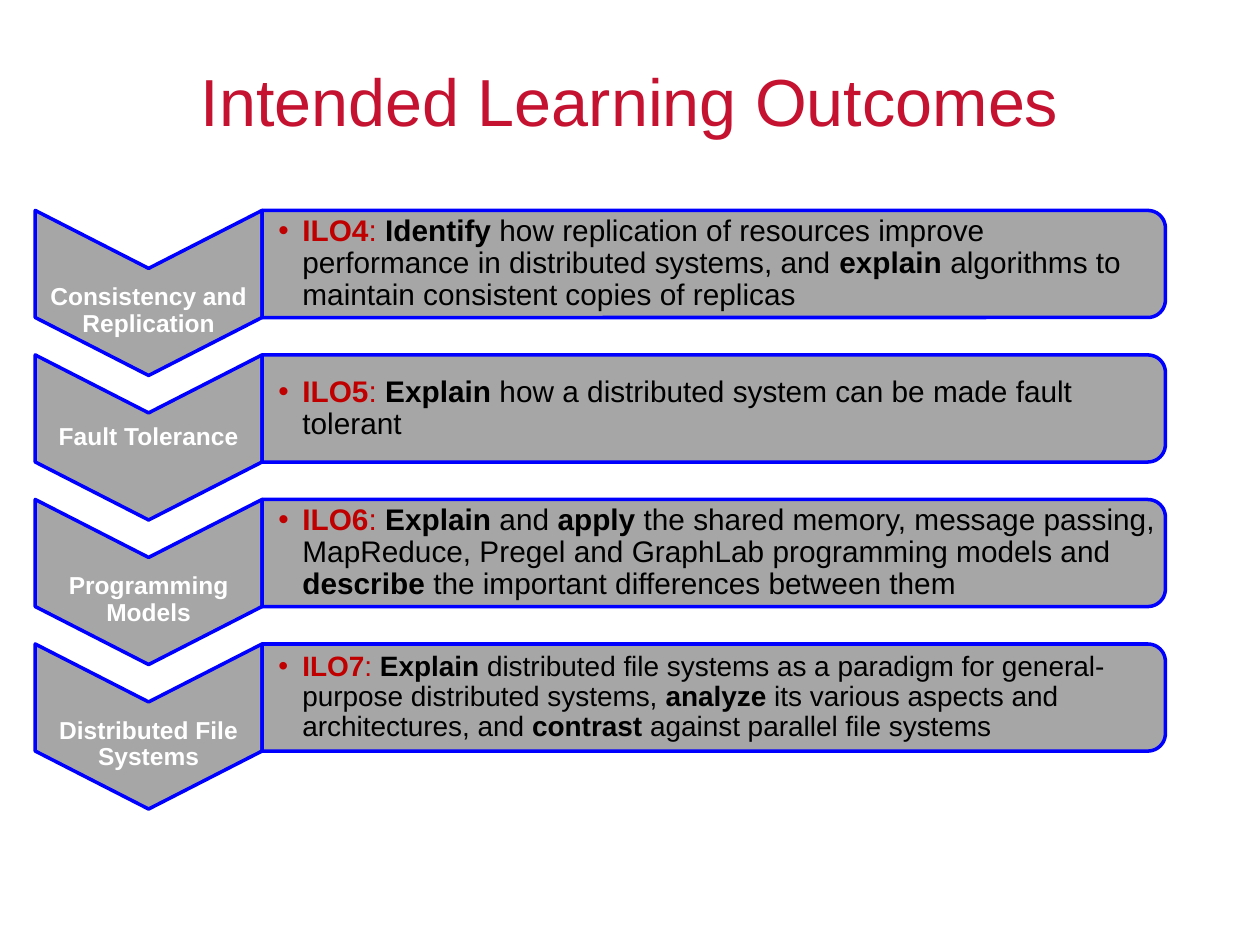
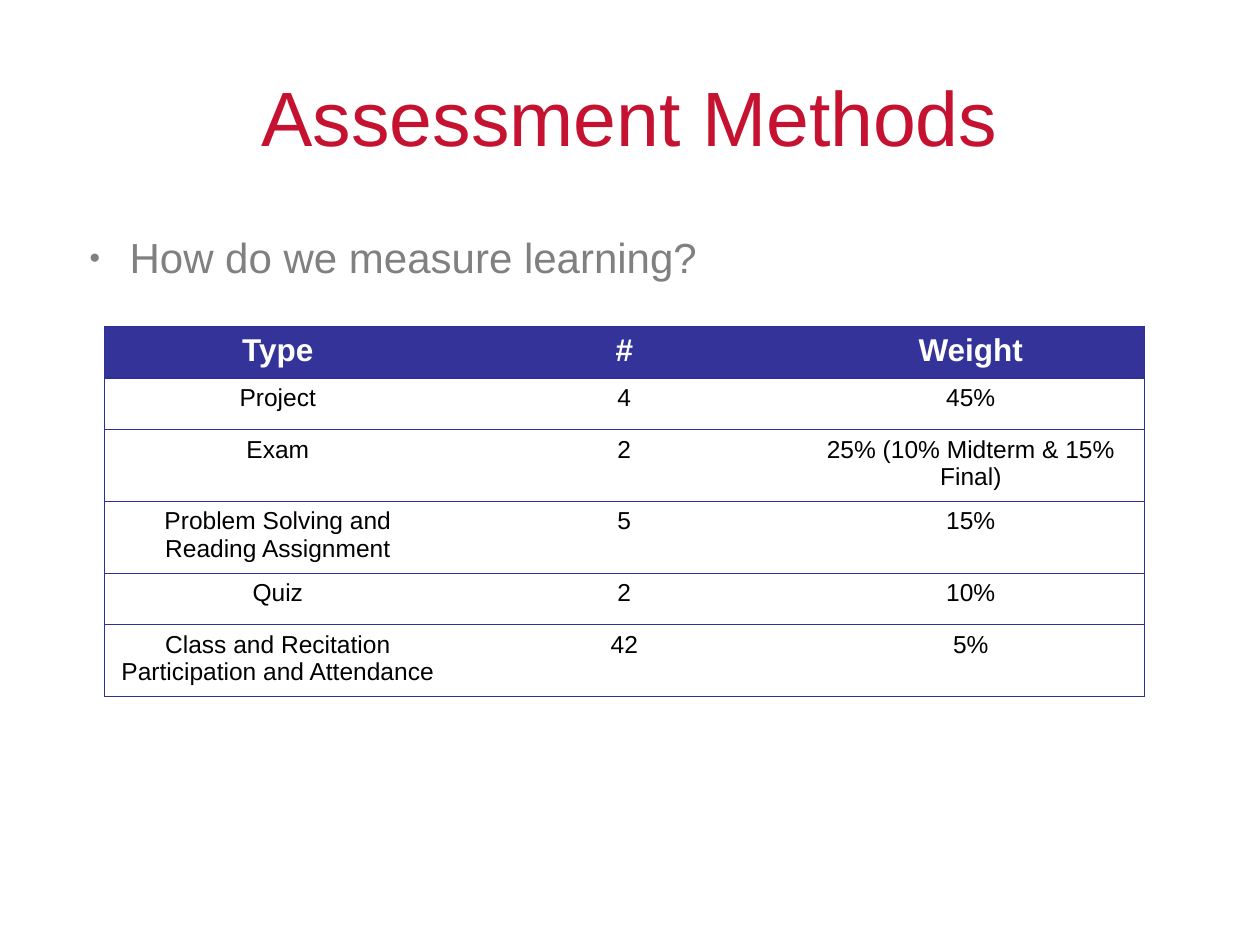
from dataclasses import dataclass
from math import cos, pi, sin

from lxml import etree
from pptx import Presentation
from pptx.dml.color import RGBColor
from pptx.enum.text import MSO_ANCHOR, PP_ALIGN
from pptx.oxml.ns import qn
from pptx.util import Inches, Pt

CENTER, LEFT = PP_ALIGN.CENTER, PP_ALIGN.LEFT
TOP, MIDDLE = MSO_ANCHOR.TOP, MSO_ANCHOR.MIDDLE
TITLE_ONLY = 5


@dataclass(frozen=True)
class Theme:
    """Colours, type sizes and line widths shared by the slides."""
    font: str = "Arial"
    title: str = "C41230"
    label: str = "C00000"
    black: str = "000000"
    white: str = "FFFFFF"
    question: str = "808080"
    panel: str = "A6A6A6"
    outline: str = "0000FF"
    header: str = "333399"
    border: str = "2F2F98"
    outline_width: float = 2
    border_width: float = 0.75
    question_size: int = 24
    header_size: int = 18
    small_size: int = 14


THEME = Theme()

OUTCOMES = [
    ("Consistency and Replication", "ILO4", 17,
     "*Identify* how replication of resources improve performance in distributed systems, "
     "and *explain* algorithms to maintain consistent copies of replicas"),
    ("Fault Tolerance", "ILO5", 17,
     "*Explain* how a distributed system can be made fault tolerant"),
    ("Programming Models", "ILO6", 17,
     "*Explain* and *apply* the shared memory, message passing, MapReduce, Pregel and GraphLab "
     "programming models and *describe* the important differences between them"),
    ("Distributed File Systems", "ILO7", 16,
     "*Explain* distributed file systems as a paradigm for general-purpose distributed systems, "
     "*analyze* its various aspects and architectures, and *contrast* against parallel file systems"),
]

ASSESSMENTS = [
    ("Type", "#", "Weight"),
    ("Project", "4", "45%"),
    ("Exam", "2", "25% (10% Midterm & 15% Final)"),
    ("Problem Solving and Reading Assignment", "5", "15%"),
    ("Quiz", "2", "10%"),
    ("Class and Recitation Participation and Attendance", "42", "5%"),
]
ROW_HEIGHTS = [0.41, 0.41, 0.57, 0.57, 0.41, 0.57]


def add_text(paragraph, text, size, color, bold=False, align=None, spacing=None):
    """Add text to a paragraph, switching bold at each asterisk."""
    if align is not None:
        paragraph.alignment = align
    if spacing is not None:
        paragraph.line_spacing = spacing
    for index, part in enumerate(text.split("*")):
        if part:
            run = paragraph.add_run()
            run.text = part
            run.font.name = THEME.font
            run.font.size = Pt(size)
            run.font.bold = bold or index % 2 == 1
            run.font.color.rgb = RGBColor.from_string(color)


def add_bullet(paragraph, character, color, margin, hanging, percent=100):
    """Give a paragraph a hanging bullet."""
    properties = paragraph._p.get_or_add_pPr()
    properties.set("marL", str(Inches(margin)))
    properties.set("indent", str(-Inches(hanging)))
    bullet_color = etree.SubElement(properties, qn("a:buClr"))
    etree.SubElement(bullet_color, qn("a:srgbClr"), val=color)
    etree.SubElement(properties, qn("a:buSzPct"), val=str(percent * 1000))
    etree.SubElement(properties, qn("a:buFont"), typeface=THEME.font)
    etree.SubElement(properties, qn("a:buChar"), char=character)


def set_frame(text_frame, anchor, insets):
    """Wrap a text frame, set its anchor and insets, and return its first paragraph."""
    text_frame.word_wrap = True
    text_frame.vertical_anchor = anchor
    (text_frame.margin_left, text_frame.margin_top,
     text_frame.margin_right, text_frame.margin_bottom) = map(Inches, insets)
    return text_frame.paragraphs[0]


def add_titled_slide(presentation, title, size, top, height):
    """Add a title-only slide with a formatted title."""
    slide = presentation.slides.add_slide(presentation.slide_layouts[TITLE_ONLY])
    shape = slide.shapes.title
    shape.left, shape.top, shape.width, shape.height = map(Inches, (0.5, top, 9, height))
    paragraph = set_frame(shape.text_frame, MIDDLE, (0.1, 0.05, 0.1, 0.05))
    add_text(paragraph, title, size, THEME.title, align=CENTER)
    return slide


def add_panel(slide, points):
    """Draw a closed grey outline through points given in inches."""
    corners = [(Inches(x), Inches(y)) for x, y in points]
    builder = slide.shapes.build_freeform(*corners[0])
    builder.add_line_segments(corners[1:], close=True)
    shape = builder.convert_to_shape()
    shape.shadow.inherit = False
    shape.fill.solid()
    shape.fill.fore_color.rgb = RGBColor.from_string(THEME.panel)
    shape.line.color.rgb = RGBColor.from_string(THEME.outline)
    shape.line.width = Pt(THEME.outline_width)
    return shape


def add_topic(slide, topic, left, top, width, side, notch):
    """Draw a downward chevron holding a topic."""
    right, center = left + width, left + width / 2
    shape = add_panel(slide, [(right, top), (right, top + side), (center, top + side + notch),
                              (left, top + side), (left, top), (center, top + notch)])
    drop = 0.29 if len(topic) > 15 else 0
    paragraph = set_frame(shape.text_frame, MIDDLE, (0.01, drop, 0.01, 0))
    add_text(paragraph, topic, THEME.small_size, THEME.white, bold=True, align=CENTER, spacing=0.9)


def add_outcome(slide, label, text, size, left, top, width, height):
    """Draw a panel with rounded right corners holding one outcome."""
    radius, steps = 0.14, 12
    right, bottom = left + width, top + height
    angles = [pi / 2 * step / steps for step in range(steps + 1)]
    upper = [(right - radius + radius * sin(a), top + radius - radius * cos(a)) for a in angles]
    lower = [(x, top + bottom - y) for x, y in reversed(upper)]
    shape = add_panel(slide, [(left, top), *upper, *lower, (left, bottom)])
    paragraph = set_frame(shape.text_frame, MIDDLE, (0.13, 0.05, 0.05, 0.05))
    add_bullet(paragraph, "•", THEME.label, 0.19, 0.19)
    add_text(paragraph, f"*{label}*: ", size, THEME.label, align=LEFT, spacing=0.9)
    add_text(paragraph, text, size, THEME.black)


def add_outcome_list(slide, left, top, width, pitch):
    """Stack the topics and their outcomes at an equal pitch."""
    topic_width, side, notch = 1.8, 0.85, 0.46
    for index, (topic, label, size, text) in enumerate(OUTCOMES):
        row_top = top + index * pitch
        add_topic(slide, topic, left, row_top, topic_width, side, notch)
        add_outcome(slide, label, text, size, left + topic_width, row_top,
                    width - topic_width, side)


def set_borders(cell, sides):
    """Draw the borders of a cell on the given sides and clear the others."""
    properties = cell._tc.get_or_add_tcPr()
    for side in "LRTB":
        line = etree.SubElement(properties, qn(f"a:ln{side}"), w=str(Pt(THEME.border_width)))
        if side in sides:
            fill = etree.SubElement(line, qn("a:solidFill"))
            etree.SubElement(fill, qn("a:srgbClr"), val=THEME.border)
        else:
            etree.SubElement(line, qn("a:noFill"))


def add_assessment_table(slide, left, top, width):
    """Draw the table of assessment types, counts and weights."""
    columns = len(ASSESSMENTS[0])
    table = slide.shapes.add_table(len(ASSESSMENTS), columns, Inches(left), Inches(top),
                                   Inches(width), Inches(sum(ROW_HEIGHTS))).table
    table.first_row = table.horz_banding = False
    for row_index, values in enumerate(ASSESSMENTS):
        table.rows[row_index].height = Inches(ROW_HEIGHTS[row_index])
        is_header = row_index == 0
        for column_index, value in enumerate(values):
            cell = table.cell(row_index, column_index)
            set_borders(cell, "TB" + {0: "L", columns - 1: "R"}.get(column_index, ""))
            if is_header:
                cell.fill.solid()
                cell.fill.fore_color.rgb = RGBColor.from_string(THEME.header)
            else:
                cell.fill.background()
            add_text(cell.text_frame.paragraphs[0], value,
                     THEME.header_size if is_header else THEME.small_size,
                     THEME.white if is_header else THEME.black,
                     bold=is_header, align=CENTER)


def add_question(slide, text, left, top, width, height):
    """Write the bulleted question above the table."""
    box = slide.shapes.add_textbox(*map(Inches, (left, top, width, height)))
    paragraph = set_frame(box.text_frame, TOP, (0.1, 0.08, 0.1, 0.05))
    add_bullet(paragraph, "●", THEME.question, 0.43, 0.32, percent=45)
    add_text(paragraph, text, THEME.question_size, THEME.question, align=LEFT)


def build_outcomes_slide(presentation):
    """Build the slide of intended learning outcomes."""
    slide = add_titled_slide(presentation, "Intended Learning Outcomes", 38, 0.17, 1.25)
    add_outcome_list(slide, 0.28, 1.67, 8.97, 1.147)


def build_assessment_slide(presentation):
    """Build the slide of assessment methods."""
    slide = add_titled_slide(presentation, "Assessment Methods", 44, 0.34, 1.16)
    add_question(slide, "How do we measure learning?", 0.5, 1.76, 9.02, 4.95)
    add_assessment_table(slide, 0.83, 2.59, 8.25)


def main():
    """Build and save the presentation."""
    presentation = Presentation()
    presentation.slide_width, presentation.slide_height = Inches(10), Inches(7.5)
    build_outcomes_slide(presentation)
    build_assessment_slide(presentation)
    presentation.save("out.pptx")


if __name__ == "__main__":
    main()
